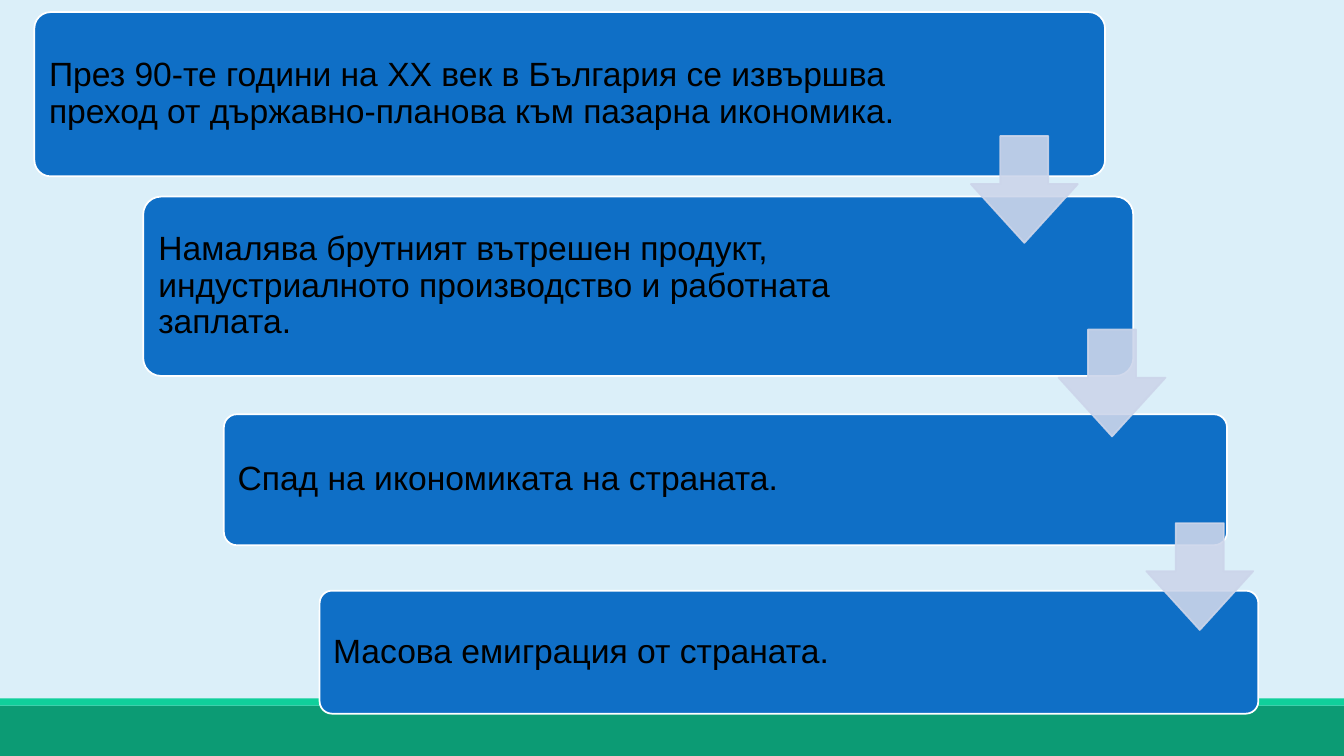
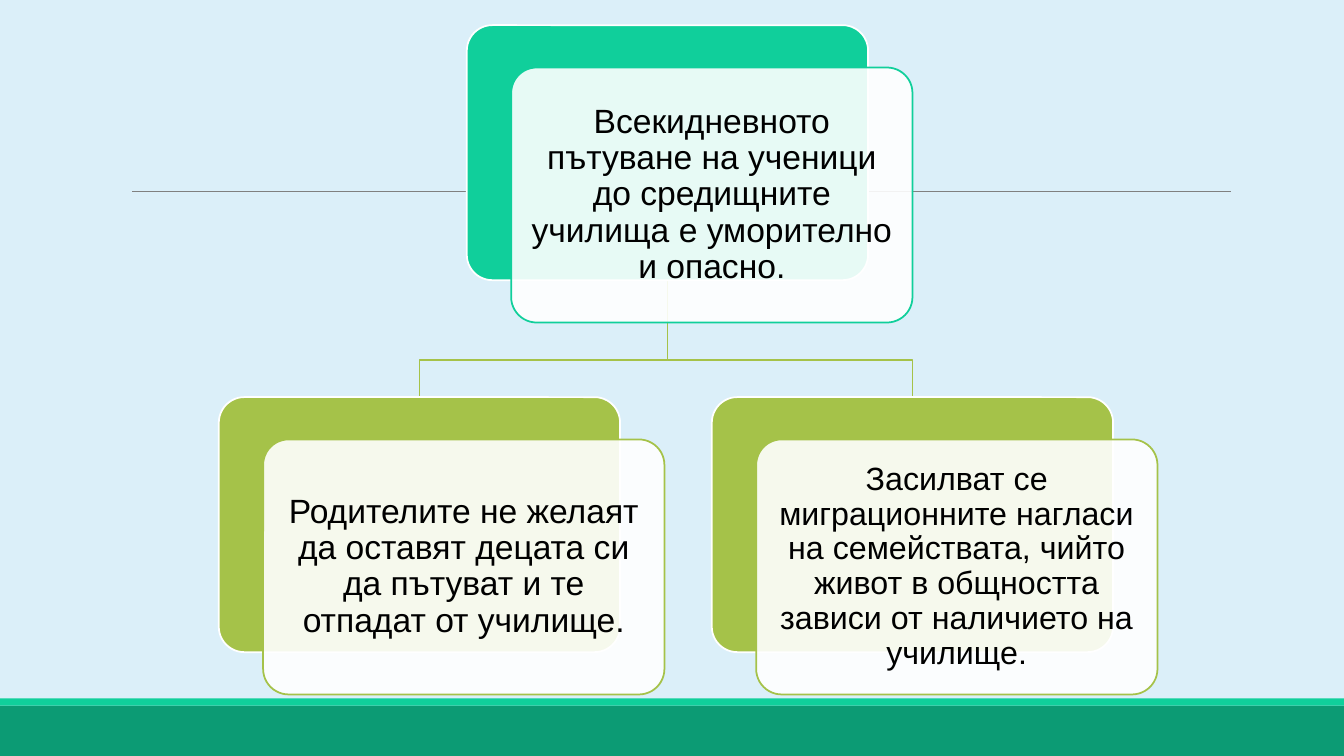
from dataclasses import dataclass

from pptx import Presentation
from pptx.dml.color import RGBColor
from pptx.enum.shapes import MSO_CONNECTOR, MSO_SHAPE
from pptx.enum.text import MSO_ANCHOR, PP_ALIGN
from pptx.oxml.ns import qn
from pptx.oxml.xmlchemy import OxmlElement
from pptx.util import Inches, Pt

RECT, ROUND, ARROW = (MSO_SHAPE.RECTANGLE, MSO_SHAPE.ROUNDED_RECTANGLE,
                      MSO_SHAPE.DOWN_ARROW)
LEFT, CENTER, MIDDLE = PP_ALIGN.LEFT, PP_ALIGN.CENTER, MSO_ANCHOR.MIDDLE
STRAIGHT = MSO_CONNECTOR.STRAIGHT

# Shared look
SKY, TEAL, MINT = "DBEFF9", "0C9B74", "10CF9B"
BLUE, LIME, LILAC = "0F6FC6", "A5C249", "CCD5EA"
WHITE, BLACK, GRAY = "FFFFFF", "000000", "808080"
WIDTH, HEIGHT = 13.33, 7.5
LINE_WIDTH = 1.25
OPACITY = 90
INSET = 0.1
FRAME = {"word_wrap": True, "vertical_anchor": MIDDLE,
         "margin_left": Inches(INSET), "margin_top": Inches(INSET),
         "margin_bottom": Inches(INSET)}

# Staircase and tree measures
STEP_RIGHT_INSET = 1.92
ARROW_SIZE, ARROW_X, ARROW_Y = 1.06, 9.63, 1.35
ARROW_DX, ARROW_DY = 0.87, 1.92
CARD_W, CARD_H = 3.98, 2.53
CARD_DX, CARD_DY = 0.44, 0.42
BRANCH_Y = 3.57


@dataclass
class Step:
    x: float
    y: float
    w: float
    h: float
    text: str


@dataclass
class Card:
    x: float
    y: float
    color: str
    text: str
    size: int = 24

    @property
    def center(self) -> float:
        return self.x + CARD_W / 2


STEPS = [
    Step(0.34, 0.12, 10.62, 1.63,
         "През 90-те години на XX век в България се извършва преход от "
         "държавно-планова към пазарна икономика."),
    Step(1.42, 1.95, 9.82, 1.78,
         "Намалява брутният вътрешен продукт, индустриалното производство "
         "и работната заплата."),
    Step(2.22, 4.11, 9.95, 1.3, "Спад на икономиката на страната."),
    Step(3.17, 5.86, 9.31, 1.22, "Масова емиграция от страната."),
]
ROOT = Card(4.63, 0.25, MINT,
            "Всекидневното пътуване на ученици до средищните училища е "
            "уморително и опасно.")
CHILDREN = [
    Card(2.17, 3.94, LIME,
         "Родителите не желаят да оставят децата си да пътуват и те "
         "отпадат от училище."),
    Card(7.06, 3.94, LIME,
         "Засилват се миграционните нагласи на семействата, чийто живот в "
         "общността зависи от наличието на училище.", 23),
]


def rgb(color: str) -> RGBColor:
    return RGBColor.from_string(color)


def set_line(shape, color: str, width: float = LINE_WIDTH) -> None:
    shape.line.color.rgb = rgb(color)
    shape.line.width = Pt(width)


def fade(element) -> None:
    """Make every colour inside the element slightly transparent."""
    for color in element.iter(qn("a:srgbClr")):
        alpha = OxmlElement("a:alpha")
        alpha.set("val", str(OPACITY * 1000))
        color.append(alpha)


def add_block(s, kind, x: float, y: float, w: float, h: float, fill: str,
              line: str = "", adjust: tuple = ()):
    shape = s.shapes.add_shape(kind, *map(Inches, (x, y, w, h)))
    shape.shadow.inherit = False
    shape.fill.solid()
    shape.fill.fore_color.rgb = rgb(fill)
    if line:
        set_line(shape, line)
    else:
        shape.line.fill.background()
    for i, value in enumerate(adjust):
        shape.adjustments[i] = value
    return shape


def write(shape, text: str, size: int = 24, align=LEFT,
          right: float = INSET) -> None:
    tf = shape.text_frame
    for name, value in FRAME.items():
        setattr(tf, name, value)
    tf.margin_right = Inches(right)
    p = tf.paragraphs[0]
    p.alignment, p.line_spacing = align, 0.9
    r = p.add_run()
    r.text = text
    for name, value in {"name": "Arial", "size": Pt(size)}.items():
        setattr(r.font, name, value)
    r.font.color.rgb = rgb(BLACK)


def add_slide(prs):
    s = prs.slides.add_slide(prs.slide_layouts[6])
    add_block(s, RECT, 0, 7, WIDTH, 0.5, TEAL)
    add_block(s, RECT, 0, 6.93, WIDTH, 0.07, MINT)
    return s


def add_rule(s, x1: float, x2: float, y: float) -> None:
    rule = s.shapes.add_connector(STRAIGHT, *map(Inches, (x1, y, x2, y)))
    set_line(rule, GRAY, 0.5)
    rule.element.spPr.append(OxmlElement("a:effectLst"))


def add_branch(s, parent: Card, child: Card) -> None:
    points = [(parent.center, parent.y + CARD_H), (parent.center, BRANCH_Y),
              (child.center, BRANCH_Y), (child.center, child.y)]
    start, *rest = [(Inches(x), Inches(y)) for x, y in points]
    builder = s.shapes.build_freeform(*start)
    builder.add_line_segments(rest, close=False)
    branch = builder.convert_to_shape()
    branch.shadow.inherit = False
    branch.fill.background()
    set_line(branch, LIME)


def add_card(s, card: Card) -> None:
    add_block(s, ROUND, card.x, card.y, CARD_W, CARD_H, card.color, WHITE,
              (0.1,))
    front = add_block(s, ROUND, card.x + CARD_DX, card.y + CARD_DY,
                      CARD_W, CARD_H, WHITE, card.color, (0.1,))
    fade(front.element.spPr.find(qn("a:solidFill")))
    write(front, card.text, card.size, CENTER)


def build_staircase(prs) -> None:
    s = add_slide(prs)
    for step in STEPS:
        box = add_block(s, ROUND, step.x, step.y, step.w, step.h, BLUE,
                        WHITE, (0.1,))
        write(box, step.text, right=STEP_RIGHT_INSET)
    # Arrows lie over the boxes they link
    for i in range(len(STEPS) - 1):
        arrow = add_block(s, ARROW, ARROW_X + i * ARROW_DX,
                          ARROW_Y + i * ARROW_DY, ARROW_SIZE, ARROW_SIZE,
                          LILAC, LILAC)
        # Shaft width is the first adjustment by name in the preset's order
        arrow.adjustments[0], arrow.adjustments[1] = 0.45, 0.55
        fade(arrow.element.spPr)


def build_tree(prs) -> None:
    s = add_slide(prs)
    add_rule(s, 1.31, 12.21, 1.9)
    # Branches go behind the cards
    for child in reversed(CHILDREN):
        add_branch(s, ROOT, child)
    for card in [ROOT, *CHILDREN]:
        add_card(s, card)


def main() -> None:
    prs = Presentation()
    prs.slide_width, prs.slide_height = Inches(WIDTH), Inches(HEIGHT)
    background = prs.slide_master.background.fill
    background.solid()
    background.fore_color.rgb = rgb(SKY)
    build_staircase(prs)
    build_tree(prs)
    prs.save("out.pptx")


if __name__ == "__main__":
    main()
